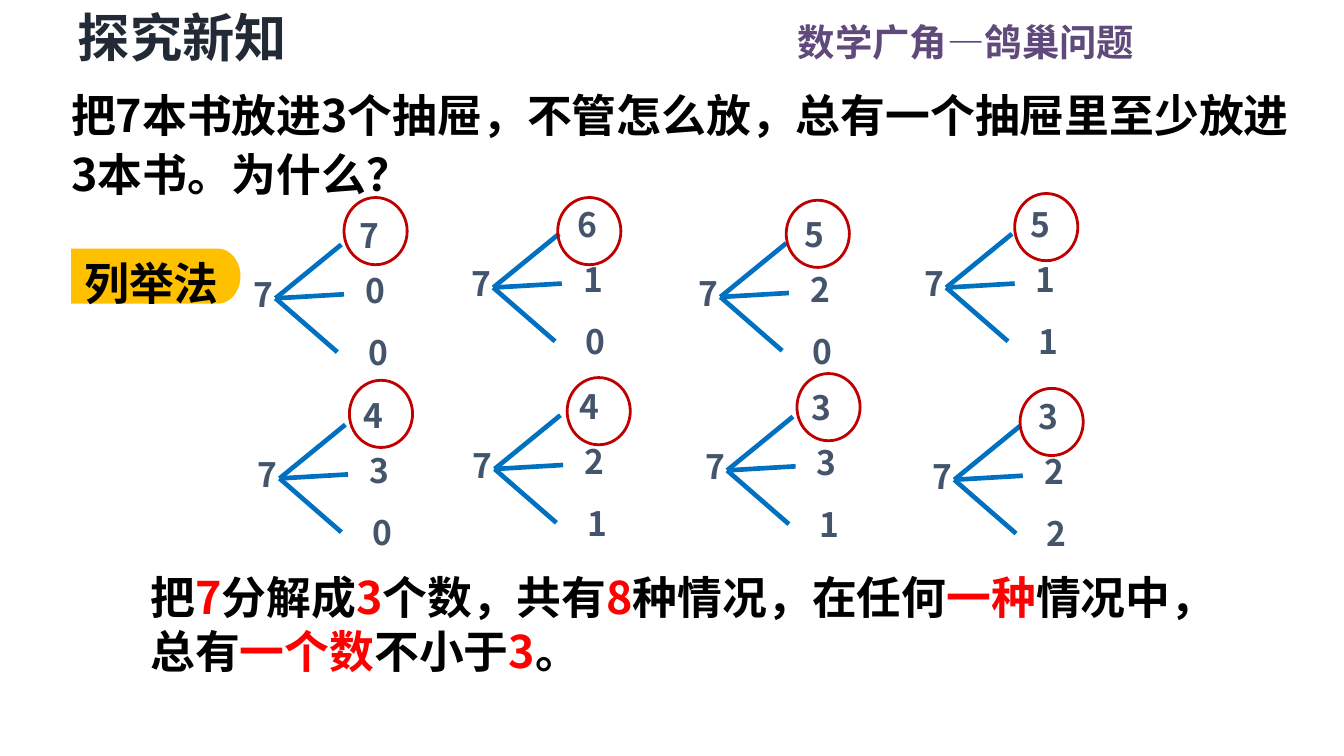
import math
from dataclasses import dataclass

from lxml import etree
from pptx import Presentation, util as u
from pptx.dml.color import RGBColor
from pptx.enum import shapes, text
from pptx.oxml.ns import qn


@dataclass(frozen=True)
class Theme:
    font: str = "Noto Sans CJK SC"
    title: str = "222A35"
    topic: str = "604A7B"
    ink: str = "000000"
    key: str = "FF0000"
    digit: str = "44546A"
    ray: str = "0070C0"
    ring: str = "C00000"
    tab: str = "FFC000"
    big: int = 28
    body: int = 24
    mid: int = 20
    small: int = 18


T = Theme()

# Left and top of each fan, its three parts, and the ring's offset
FANS = [
    (1.79, 1.55, "700", (0.77, -0.08)),
    (3.41, 1.47, "610", (0.74, 0)),
    (5.10, 1.54, "520", (0.75, -0.05)),
    (6.78, 1.47, "511", (0.77, -0.03)),
    (1.82, 2.89, "430", (0.78, -0.06)),
    (3.42, 2.82, "421", (0.80, -0.01)),
    (5.15, 2.83, "331", (0.78, -0.05)),
    (6.84, 2.90, "322", (0.75, -0.01)),
]

# Text pieces of the conclusion; every second one is highlighted
PARTS = ["把", "7", "分解成", "3", "个数，共有", "8", "种情况，在任何",
         "一种", "情况中，总有", "一个数", "不小于", "3", "。"]


def rgb(code):
    return RGBColor.from_string(code)


def style(run, size, color):
    font = run.font
    font.size, font.bold, font.name = u.Pt(size), True, T.font
    font.color.rgb = rgb(color)
    east = etree.SubElement(run._r.get_or_add_rPr(), qn("a:ea"))
    east.set("typeface", T.font)


def place(shape, box):
    shape.left, shape.top, shape.width, shape.height = map(u.Inches, box)


def label(slide, box, words, size, color):
    """Add a wrapped text box with one styled paragraph."""
    frame = slide.shapes.add_textbox(*map(u.Inches, box)).text_frame
    frame.word_wrap = True
    frame.text = words
    for run in frame.paragraphs[0].runs:
        style(run, size, color)
    return frame


def header(slide, box):
    left, top, width, height = box
    title = slide.shapes.title
    place(title, (left, top, 2.02, height))
    frame = title.text_frame
    frame.text = "探究新知"
    frame.auto_size = text.MSO_AUTO_SIZE.NONE
    frame.vertical_anchor = text.MSO_ANCHOR.TOP
    frame.margin_left = frame.margin_right = u.Inches(0.07)
    frame.margin_top = frame.margin_bottom = u.Inches(0.04)
    frame.paragraphs[0].alignment = text.PP_ALIGN.LEFT
    style(frame.paragraphs[0].runs[0], T.big, T.title)

    topic = label(slide, (left + width - 2.83, top + 0.09, 2.83, 0.44),
                  "数学广角—鸽巢问题", T.mid, T.topic)
    topic.paragraphs[0].alignment = text.PP_ALIGN.RIGHT


def question(slide, box):
    frame = label(
        slide, box,
        "把7本书放进3个抽屉，不管怎么放，总有一个抽屉里至少放进3本书。为什么？",
        T.body, T.ink)
    frame.vertical_anchor = text.MSO_ANCHOR.MIDDLE
    frame.paragraphs[0].line_spacing = 1.1


def method(slide, box):
    """Tab with a rounded right end and its caption."""
    left, top, width, height = box
    half, bulge = height / 2, 0.17
    arc = []
    for step in range(-12, 13):
        angle = math.pi * step / 24
        arc.append((left + width - bulge + bulge * math.cos(angle),
                    top + half + half * math.sin(angle)))
    points = [(u.Inches(x), u.Inches(y)) for x, y in arc + [(left, top + height)]]
    pen = slide.shapes.build_freeform(u.Inches(left), u.Inches(top))
    pen.add_line_segments(points, close=True)
    tab = pen.convert_to_shape()
    tab.shadow.inherit = False
    tab.fill.solid()
    tab.fill.fore_color.rgb = rgb(T.tab)
    tab.line.fill.background()
    label(slide, (left, top, 1.6, 0.5), "列举法", T.body, T.ink)


def ray(slide, start, end):
    line = slide.shapes.add_connector(
        shapes.MSO_CONNECTOR.STRAIGHT, *map(u.Inches, start + end))
    line.line.color.rgb = rgb(T.ray)
    line.line.width = u.Pt(2.5)
    etree.SubElement(line._element.spPr, qn("a:effectLst"))


def fan(slide, left, top, parts, ring):
    """Split 7 into three numbers and circle the largest."""
    hub = (left + 0.26, top + 0.67)
    for dx, dy in [(0.49, -0.4), (0.51, -0.03), (0.46, 0.4)]:
        ray(slide, hub, (hub[0] + dx, hub[1] + dy))

    spots = [(0, 0.44), (0.79, 0), (0.83, 0.41), (0.85, 0.87)]
    for digit, (dx, dy) in zip("7" + parts, spots):
        label(slide, (left + dx, top + dy, 0.62, 0.4), digit, T.small, T.digit)

    oval = slide.shapes.add_shape(
        shapes.MSO_SHAPE.OVAL, u.Inches(left + ring[0]), u.Inches(top + ring[1]),
        u.Inches(0.47), u.Inches(0.5))
    oval.shadow.inherit = False
    oval.fill.background()
    oval.line.color.rgb = rgb(T.ring)
    oval.line.width = u.Pt(1.5)


def summary(slide, box):
    para = label(slide, box, "", T.body, T.ink).paragraphs[0]
    for i, words in enumerate(PARTS):
        run = para.add_run()
        run.text = words
        style(run, T.body, T.key if i % 2 else T.ink)


def main():
    deck = Presentation()
    # Widescreen page, 16 to 9
    deck.slide_width, deck.slide_height = u.Inches(10), u.Inches(10 * 9 / 16)
    slide = deck.slides.add_slide(deck.slide_layouts.get_by_name("Title Only"))
    header(slide, (0.51, 0, 8.03, 0.55))
    question(slide, (0.43, 0.56, 9.45, 0.99))
    method(slide, (0.53, 1.85, 1.26, 0.41))
    for item in FANS:
        fan(slide, *item)
    summary(slide, (1.02, 4.19, 8.01, 0.91))
    deck.save("out.pptx")


if __name__ == "__main__":
    main()
